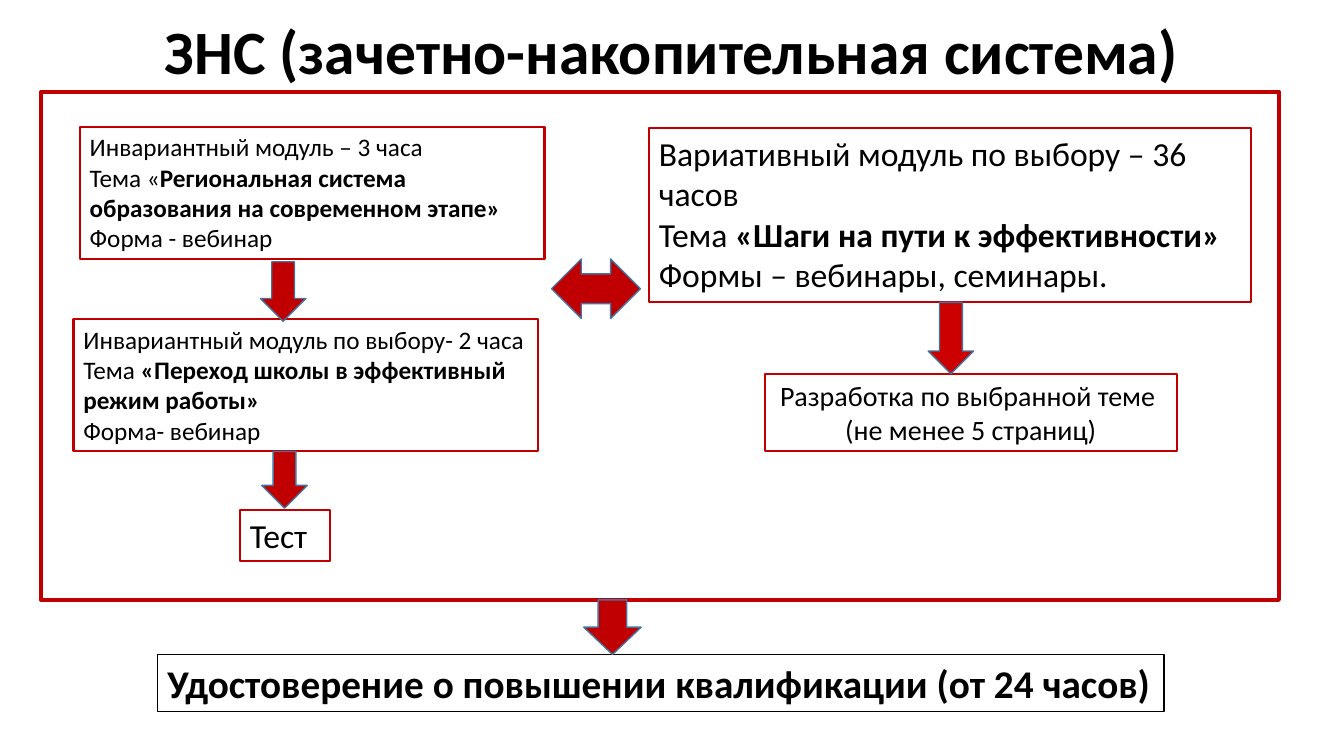
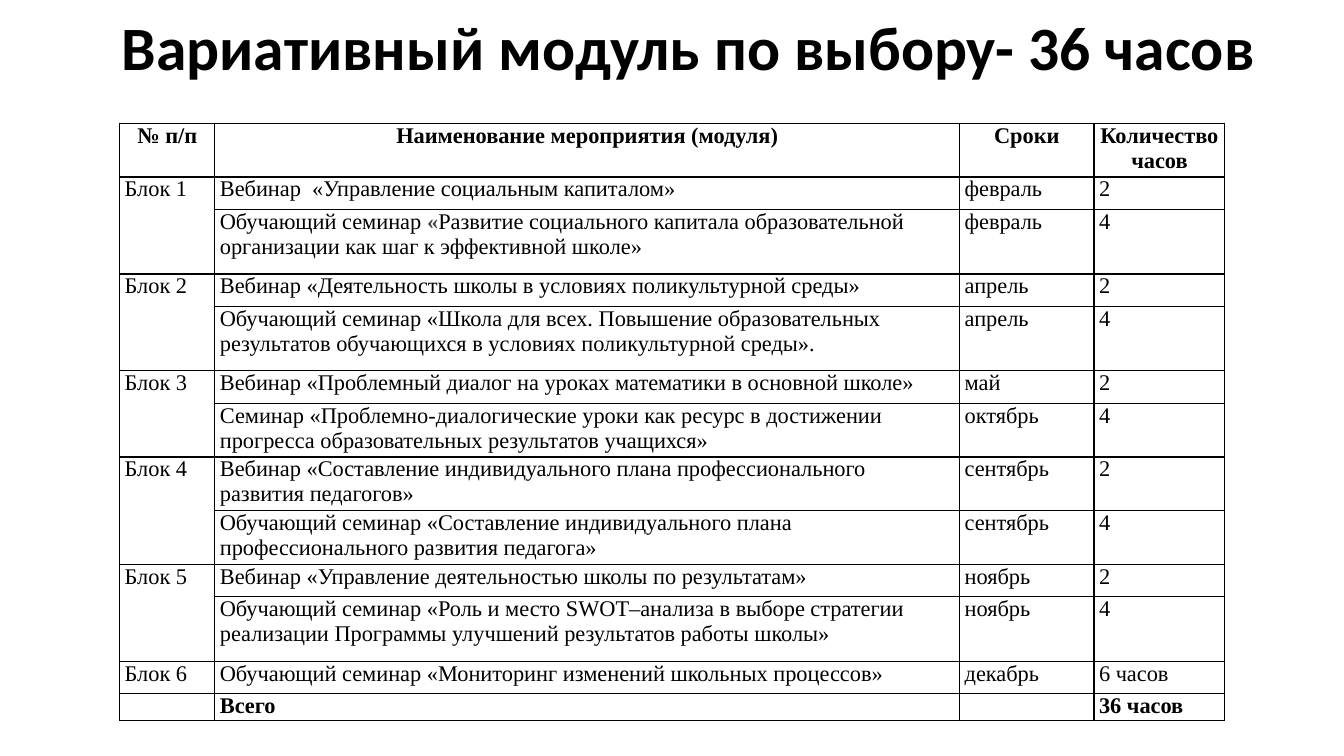
from lxml import etree
from pptx import Presentation
from pptx.dml.color import RGBColor
from pptx.enum.shapes import MSO_SHAPE as SHAPE
from pptx.enum.text import MSO_ANCHOR as ANCHOR, MSO_AUTO_SIZE as AUTO, PP_ALIGN as ALIGN
from pptx.oxml.ns import qn
from pptx.util import Pt

# Shared look
BLACK = RGBColor(0x00, 0x00, 0x00)
RED = RGBColor(0xC0, 0x00, 0x00)
BRIGHT_RED = RGBColor(0xCC, 0x00, 0x00)
BLUE = RGBColor(0x43, 0x73, 0x9E)
SLATE = RGBColor(0x46, 0x44, 0x51)
SANS, SERIF = "Calibri", "Times New Roman"
TITLE_SIZE, TABLE_SIZE = 44, 16

# A paragraph is a tuple of runs: plain, bold, plain, ...
# Boxes: left, top, width, height, size, paragraphs, extra format
BOXES = [
    (57, 90.5, 332, 94.5, 18, [
        ("Инвариантный модуль – 3 часа",),
        ("Тема «", "Региональная система образования на современном этапе»"),
        ("Форма - вебинар",)], {}),
    (52.5, 228, 331.5, 94.5, 18, [
        ("Инвариантный модуль по выбору- 2 часа",),
        ("Тема ", "«Переход школы в эффективный режим работы»"),
        ("Форма- вебинар",)], {}),
    (171.5, 364.5, 64, 36, 24, [("Тест",)], {}),
    (463.5, 91.5, 430, 124, 24, [
        ("Вариативный модуль по выбору – 36 часов",),
        ("Тема ", "«Шаги на пути к эффективности»"),
        ("Формы – вебинары, семинары.",)], {}),
    (546.5, 267, 294, 55.5, 20, [
        ("Разработка по выбранной теме ",),
        ("(не менее 5 страниц)",)], {"align": ALIGN.CENTER}),
    (112.5, 467.5, 719, 41, 28, [
        ("", "Удостоверение о повышении квалификации (от 24 часов)")],
     {"line": BLACK, "weight": 1}),
]

# Arrows: preset, left, top, width, height, fill
ARROWS = [
    (SHAPE.DOWN_ARROW, 186, 187, 32.5, 42.5, RED),
    (SHAPE.DOWN_ARROW, 187, 322.5, 32.5, 40.5, RED),
    (SHAPE.LEFT_RIGHT_ARROW, 394, 185, 63.5, 42.5, RED),
    (SHAPE.DOWN_ARROW, 663, 216, 32.5, 51, BRIGHT_RED),
    (SHAPE.DOWN_ARROW, 417, 428.5, 41, 39, RED),
]

# Table: column widths, row heights, blocks of events
COLUMNS = [68, 532, 96, 93.5]
ONE_LINE, TWO_LINES, TALL, TOTAL = 23.1, 35.6, 46.2, 17.3
HEADER = ["№ п/п", "Наименование мероприятия (модуля)", "Сроки", "Количество часов"]
BLOCKS = [
    [("Вебинар  «Управление социальным капиталом»", "февраль", "2", ONE_LINE),
     (("Обучающий семинар ", "«", "Развитие социального капитала образовательной "
       "организации как шаг к эффективной школе»"), "февраль", "4", TALL)],
    [("Вебинар «Деятельность школы в условиях поликультурной среды»",
      "апрель", "2", ONE_LINE),
     ("Обучающий семинар «Школа для всех. Повышение образовательных результатов "
      "обучающихся в условиях поликультурной среды».", "апрель", "4", TALL)],
    [("Вебинар «Проблемный диалог на уроках математики в основной школе»",
      "май", "2", ONE_LINE),
     ("Семинар «Проблемно-диалогические уроки как ресурс в достижении прогресса "
      "образовательных результатов учащихся»", "октябрь", "4", TWO_LINES)],
    [("Вебинар «Составление индивидуального плана профессионального развития "
      "педагогов»", "сентябрь", "2", TWO_LINES),
     ("Обучающий семинар «Составление индивидуального плана профессионального "
      "развития педагога»", "сентябрь", "4", TWO_LINES)],
    [("Вебинар «Управление деятельностью школы по результатам»",
      "ноябрь", "2", ONE_LINE),
     ("Обучающий семинар «Роль и место SWOT–анализа в выборе стратегии реализации "
      "Программы улучшений результатов работы школы»", "ноябрь", "4", TALL)],
    [("Обучающий семинар «Мониторинг изменений школьных процессов»",
      "декабрь", "6 часов", ONE_LINE)],
]


def set_attrs(obj, values):
    for name, value in values.items():
        setattr(obj, name, value)


def write(tf, paragraphs, size, font=SANS, **p_format):
    """Fill a text frame; every second run of a paragraph is bold."""
    for i, runs in enumerate(paragraphs):
        p = tf.add_paragraph() if i else tf.paragraphs[0]
        set_attrs(p, p_format)
        for j, text in enumerate(runs):
            if text:
                r = p.add_run()
                r.text = text
                set_attrs(r.font, {"name": font, "size": Pt(size), "bold": j % 2 == 1})
                r.font.color.rgb = BLACK


def outline(s, color, weight):
    s.line.color.rgb = color
    s.line.width = Pt(weight)


def add_title(sp, text, left, top, align):
    tf = sp.add_textbox(Pt(left), Pt(top), Pt(828), Pt(104.5)).text_frame
    set_attrs(tf, {"word_wrap": True, "vertical_anchor": ANCHOR.MIDDLE})
    write(tf, [("", text)], TITLE_SIZE, alignment=align, line_spacing=0.9)


def add_box(sp, box, size, paragraphs, line=RED, weight=1.5, align=ALIGN.LEFT):
    s = sp.add_textbox(*map(Pt, box))
    outline(s, line, weight)
    set_attrs(s.text_frame, {"word_wrap": True, "auto_size": AUTO.SHAPE_TO_FIT_TEXT})
    write(s.text_frame, paragraphs, size, alignment=align)


def add_figure(sp, preset, box, fill, line, weight):
    s = sp.add_shape(preset, *map(Pt, box))
    s.shadow.inherit = False
    if fill is None:
        s.fill.background()
    else:
        s.fill.solid()
        s.fill.fore_color.rgb = fill
    outline(s, line, weight)


def style_cell(cell):
    """Black borders, no fill, tight margins."""
    set_attrs(cell, {"margin_left": Pt(3.6), "margin_right": Pt(3.6),
                     "margin_top": 0, "margin_bottom": 0})
    tc_pr = cell._tc.get_or_add_tcPr()
    for side in ("a:lnL", "a:lnR", "a:lnT", "a:lnB"):
        ln = etree.SubElement(tc_pr, qn(side), w=str(Pt(1)))
        fill = etree.SubElement(ln, qn("a:solidFill"))
        etree.SubElement(fill, qn("a:srgbClr"), val=str(BLACK))
    cell.fill.background()


def write_cell(cell, text, bold=False, align=ALIGN.LEFT):
    runs = text if isinstance(text, tuple) else ("", text) if bold else (text,)
    write(cell.text_frame, [runs], TABLE_SIZE, SERIF, alignment=align)
    if not text:
        # An empty cell keeps the text size, so its row stays low
        p = cell.text_frame.paragraphs[0]._p
        etree.SubElement(p, qn("a:endParaRPr"), sz=str(TABLE_SIZE * 100))


def add_schedule(sp, left, top):
    events = [event for block in BLOCKS for event in block]
    heights = [TWO_LINES] + [event[-1] for event in events] + [TOTAL]
    table = sp.add_table(len(heights), len(COLUMNS), Pt(left), Pt(top),
                         Pt(sum(COLUMNS)), Pt(sum(heights))).table
    set_attrs(table, {"first_row": False, "horz_banding": False})
    for column, width in zip(table.columns, COLUMNS):
        column.width = Pt(width)
    for row, height in zip(table.rows, heights):
        row.height = Pt(height)
    for cell in table.iter_cells():
        style_cell(cell)

    # Header and total
    for col, text in enumerate(HEADER):
        write_cell(table.cell(0, col), text, True, ALIGN.CENTER)
    for col, text in enumerate(["", "Всего", "", "36 часов"]):
        write_cell(table.cell(len(heights) - 1, col), text, True)

    # Blocks
    row = 1
    for number, block in enumerate(BLOCKS, 1):
        first = table.cell(row, 0)
        if len(block) > 1:
            first.merge(table.cell(row + len(block) - 1, 0))
        write_cell(first, f"Блок {number}")
        for event in block:
            for col, text in enumerate(event[:-1], 1):
                write_cell(table.cell(row, col), text)
            row += 1
    table.cell(2, 1).text_frame.paragraphs[0].runs[1].font.color.rgb = SLATE


def main():
    prs = Presentation()
    set_attrs(prs, {"slide_width": Pt(960), "slide_height": Pt(540)})
    blank = prs.slide_layouts[6]

    # Slide 1: scheme of the credit system
    sp = prs.slides.add_slide(blank).shapes
    add_title(sp, "ЗНС (зачетно-накопительная система)", 66, -13.5, ALIGN.CENTER)
    add_figure(sp, SHAPE.RECTANGLE, (29.5, 65.5, 884, 363), None, RED, 3)
    for *box, size, paragraphs, extra in BOXES:
        add_box(sp, box, size, paragraphs, **extra)
    for preset, *box, fill in ARROWS:
        add_figure(sp, preset, box, fill, BLUE, 1)

    # Slide 2: schedule of the elective module
    sp = prs.slides.add_slide(blank).shapes
    add_title(sp, "Вариативный модуль по выбору- 36 часов", 80, -16.5, ALIGN.LEFT)
    add_schedule(sp, 85.5, 88)

    prs.save("out.pptx")


if __name__ == "__main__":
    main()
